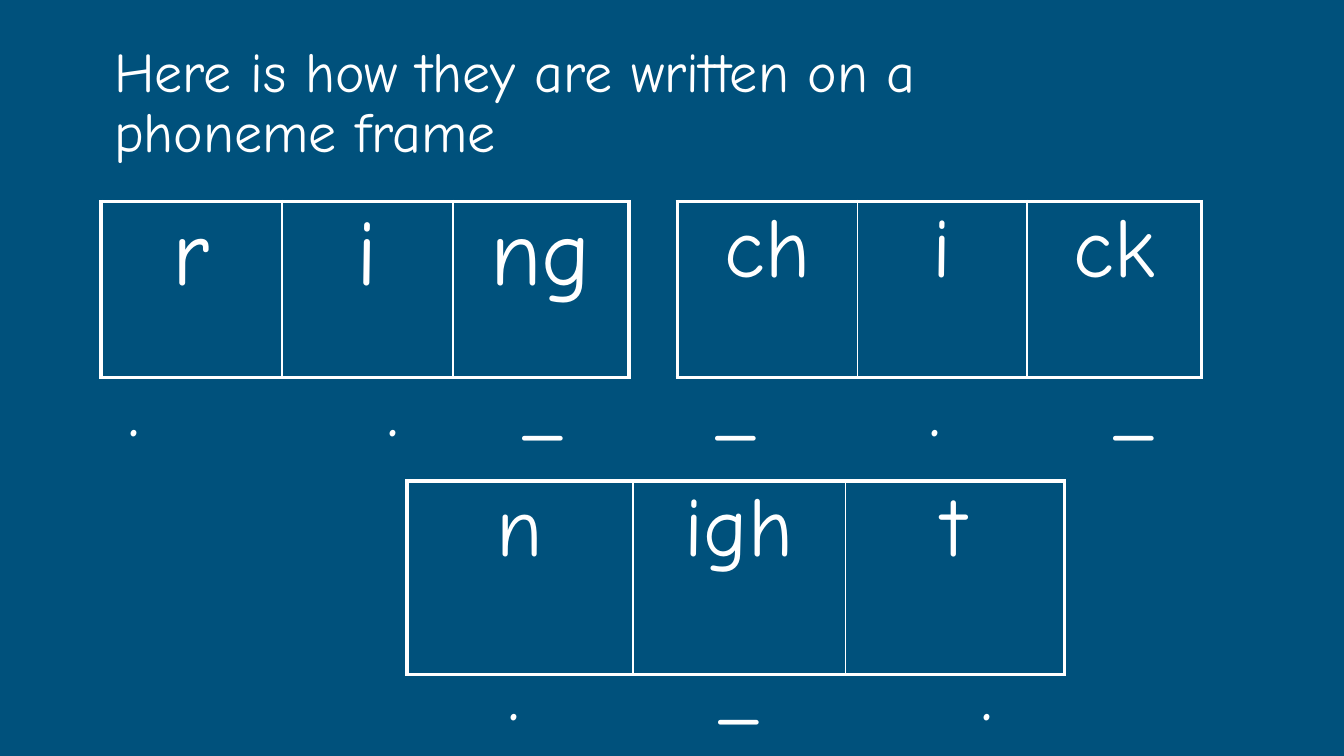
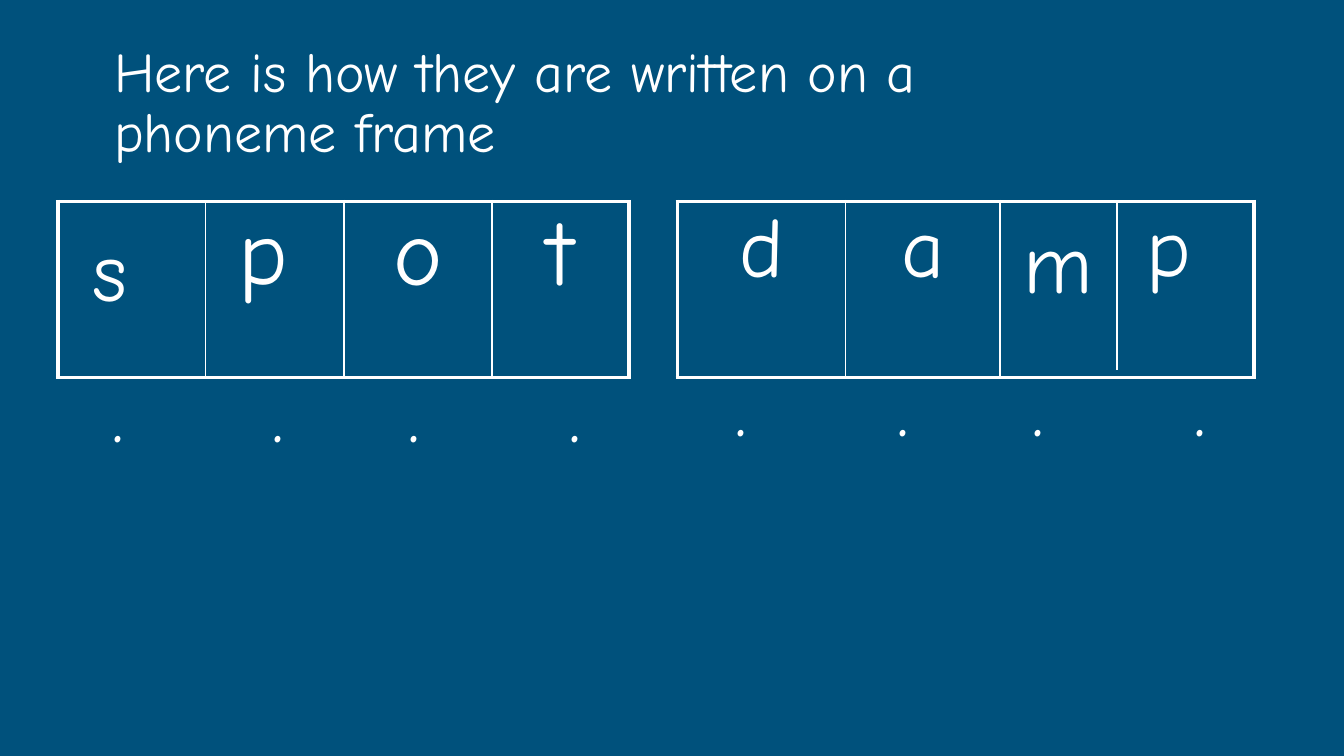
from lxml import etree
from pptx import Presentation
from pptx.dml.color import RGBColor
from pptx.enum.shapes import MSO_CONNECTOR
from pptx.enum.text import MSO_ANCHOR, MSO_AUTO_SIZE, PP_ALIGN
from pptx.oxml.ns import qn
from pptx.util import Inches, Pt

STRAIGHT = MSO_CONNECTOR.STRAIGHT
MIDDLE, NO_FIT = MSO_ANCHOR.MIDDLE, MSO_AUTO_SIZE.NONE
LEFT, CENTER = PP_ALIGN.LEFT, PP_ALIGN.CENTER

NAVY, WHITE = "00517C", "FFFFFF"
FONT = "Comic Neue"
TITLE = "Here is how they are written on a phoneme frame"
OUTER, INNER = Pt(2.25), Pt(1)
INSET = 0.1


def rgb(hex_color):
    return RGBColor.from_string(hex_color)


def style(paragraph, size, align=LEFT):
    paragraph.alignment = align
    paragraph.font.name = FONT
    paragraph.font.size = Pt(size)
    paragraph.font.color.rgb = rgb(WHITE)


# Frames: left, top, row height, text size, column widths, sounds, left cell margins
# Marks: left, top, width, then (sound button, centre on the slide)
# Loose letters: text, left, top, width; dividers: x, top, bottom
SLIDES = [
    {
        "frames": [
            (0.75, 1.5, 1.31, 50, [1.35, 1.27, 1.31], ["r", "i", "ng"], [0, 0, 0]),
            (5.04, 1.5, 1.31, 45, [1.34, 1.26, 1.3], ["ch", "i", "ck"], [0, 0, 0]),
            (3.03, 3.58, 1.44, 45, [1.68, 1.58, 1.63], ["n", "igh", "t"], [0, 0, 0]),
        ],
        "dividers": [],
        "letters": [],
        "marks": [
            (0.67, 2.64, 4.25, [(".", 1), (".", 2.93), ("_", 4.04)]),
            (4.69, 2.64, 4.25, [("_", 5.48), (".", 6.96), ("_", 8.44)]),
            (3.5, 4.76, 4.25, [(".", 3.83), ("_", 5.5), (".", 7.35)]),
        ],
    },
    {
        "frames": [
            (0.43, 1.5, 1.31, 50, [2.13, 1.1, 1.02], ["p", "o", "t"], [0.93, 0, 0]),
            (5.04, 1.5, 1.31, 45, [1.25, 1.15, 1.89], ["d", "a", "p"], [0, 0, 0.62]),
        ],
        "dividers": [(1.53, 1.51, 2.81), (8.31, 1.51, 2.75)],
        "letters": [("s", 0.59, 1.57, 0.87), ("m", 7.52, 1.51, 0.71)],
        "marks": [
            (0.51, 2.69, 4.09, [(".", 0.88), (".", 2.07), (".", 3.08), (".", 4.28)]),
            (5.16, 2.64, 4.09, [(".", 5.52), (".", 6.72), (".", 7.73), (".", 8.93)]),
        ],
    },
]

# Widescreen, 16 to 9
prs = Presentation()
prs.slide_width = Inches(10)
prs.slide_height = prs.slide_width * 9 // 16
title_only = prs.slide_layouts[5]

# Shared background
backdrop = prs.slide_master.background.fill
backdrop.solid()
backdrop.fore_color.rgb = rgb(NAVY)

for content in SLIDES:
    slide = prs.slides.add_slide(title_only)

    # Title
    title = slide.shapes.title
    title.left, title.top = Inches(0.75), Inches(0.12)
    title.width, title.height = Inches(7.51), Inches(1.31)
    title.text_frame.text = TITLE
    title.text_frame.auto_size = NO_FIT
    title.text_frame.vertical_anchor = MIDDLE
    heading = title.text_frame.paragraphs[0]
    style(heading, 30)
    heading.line_spacing = 0.9

    # Phoneme frames
    for left, top, height, size, widths, sounds, margins in content["frames"]:
        frame = slide.shapes.add_table(
            1, len(sounds), Inches(left), Inches(top),
            Inches(sum(widths)), Inches(height)).table
        frame.first_row = frame.horz_banding = False
        frame.rows[0].height = Inches(height)
        last = len(sounds) - 1
        for i, (width, sound, margin) in enumerate(zip(widths, sounds, margins)):
            frame.columns[i].width = Inches(width)
            cell = frame.cell(0, i)
            cell.margin_left = Inches(margin)
            cell.margin_right = cell.margin_top = cell.margin_bottom = 0
            cell.text = sound
            style(cell.text_frame.paragraphs[0], size, CENTER)
            borders = {
                "L": OUTER if i == 0 else INNER,
                "R": OUTER if i == last else INNER,
                "T": OUTER,
                "B": OUTER,
            }
            for side, weight in borders.items():
                border = etree.SubElement(
                    cell._tc.get_or_add_tcPr(), qn("a:ln" + side), w=str(int(weight)))
                paint = etree.SubElement(border, qn("a:solidFill"))
                etree.SubElement(paint, qn("a:srgbClr"), val=WHITE)
            cell.fill.background()

    # Extra dividers inside the four-sound frames
    for x, top, bottom in content["dividers"]:
        divider = slide.shapes.add_connector(
            STRAIGHT, Inches(x), Inches(top), Inches(x), Inches(bottom))
        divider.line.color.rgb = rgb(WHITE)
        divider.line.width = Pt(0.75)
        etree.SubElement(divider._element.spPr, qn("a:effectLst"))

    # Letters beside the extra dividers
    for letter, left, top, width in content["letters"]:
        letter_box = slide.shapes.add_textbox(
            Inches(left), Inches(top), Inches(width), Inches(0.83))
        letter_box.text_frame.word_wrap = True
        letter_box.text_frame.text = letter
        style(letter_box.text_frame.paragraphs[0], 45)

    # Sound buttons, each centred on a tab stop
    for left, top, width, buttons in content["marks"]:
        button_row = slide.shapes.add_textbox(
            Inches(left), Inches(top), Inches(width), Inches(0.58))
        button_row.text_frame.word_wrap = True
        line = button_row.text_frame.paragraphs[0]
        line.add_run().text = "".join("\t" + mark for mark, _ in buttons)
        style(line, 40)
        stops = etree.Element(qn("a:tabLst"))
        for _, centre in buttons:
            etree.SubElement(stops, qn("a:tab"), algn="ctr",
                             pos=str(int(Inches(centre - left - INSET))))
        line._p.get_or_add_pPr().insert(0, stops)

prs.save("out.pptx")
